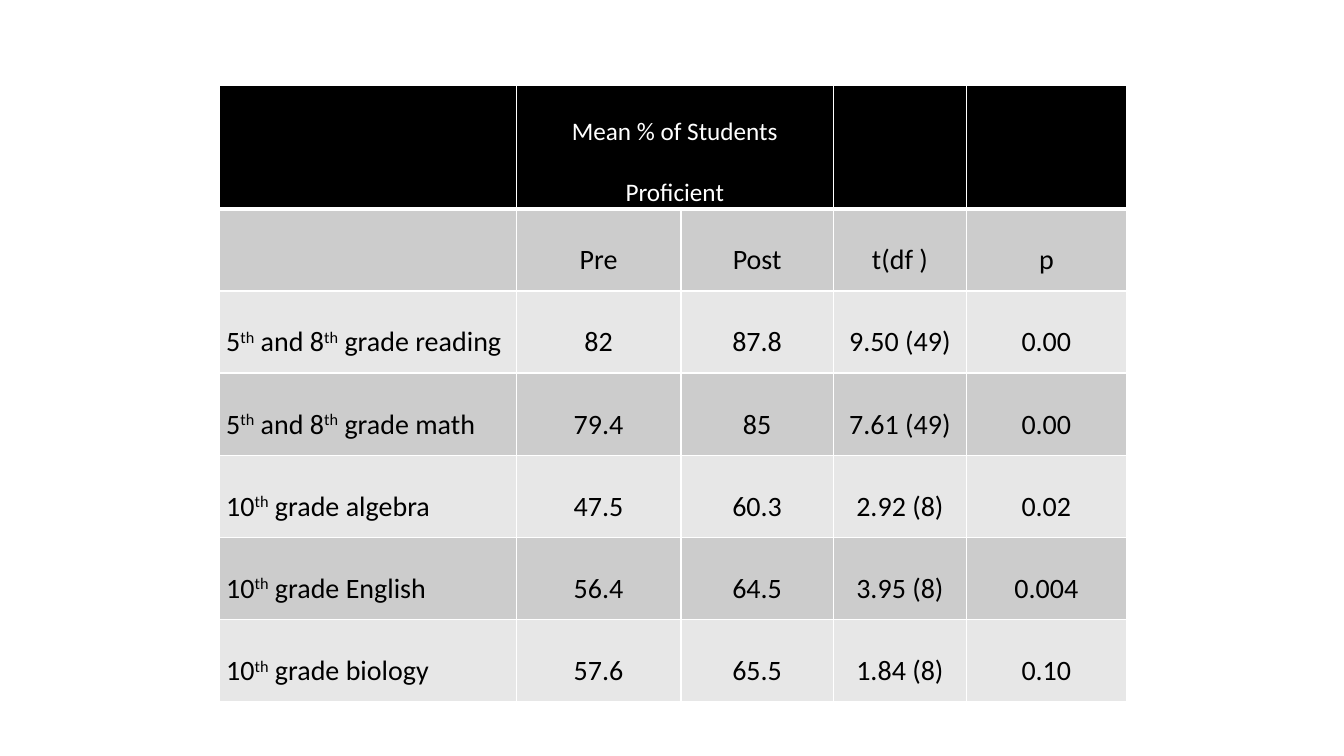
from lxml import etree
from pptx import Presentation
from pptx import util as u
from pptx.dml.color import RGBColor
from pptx.enum import text
from pptx.oxml import ns

BLACK = RGBColor(0x00, 0x00, 0x00)
WHITE = RGBColor(0xFF, 0xFF, 0xFF)
DARK_BAND = RGBColor(0xCC, 0xCC, 0xCC)
LIGHT_BAND = RGBColor(0xE7, 0xE7, 0xE7)

# Text between carets is superscript
HEADER = ["", "Mean % of Students Proficient", "", "", ""]
RESULTS = [
    ["", "Pre", "Post", "t(df )", "p"],
    ["5^th^ and 8^th^ grade reading", "82", "87.8", "9.50 (49)", "0.00"],
    ["5^th^ and 8^th^ grade math", "79.4", "85", "7.61 (49)", "0.00"],
    ["10^th^ grade algebra", "47.5", "60.3", "2.92 (8)", "0.02"],
    ["10^th^ grade English", "56.4", "64.5", "3.95 (8)", "0.004"],
    ["10^th^ grade biology", "57.6", "65.5", "1.84 (8)", "0.10"],
]
COLUMN_WIDTHS = [7.49, 4.15, 3.84, 3.36, 4.02]
HEADER_HEIGHT, RESULT_HEIGHT = 3.05, 2.07


class SlideBuilder:
    font = "Calibri"
    side_margin = u.Cm(0.18)

    def __init__(self, slide):
        self.slide = slide

    def table(self, left, top, widths, heights):
        frame = self.slide.shapes.add_table(
            len(heights), len(widths), u.Cm(left), u.Cm(top),
            u.Cm(sum(widths)), u.Cm(sum(heights)))
        for column, width in zip(frame.table.columns, widths):
            column.width = u.Cm(width)
        for row, height in zip(frame.table.rows, heights):
            row.height = u.Cm(height)
        return frame.table

    def borders(self, cell, bottom):
        properties = cell._tc.get_or_add_tcPr()
        for i, (side, points) in enumerate(zip("LRTB", (1, 1, 1, bottom))):
            line = etree.Element(ns.qn(f"a:ln{side}"), w=str(u.Pt(points)))
            paint = etree.SubElement(line, ns.qn("a:solidFill"))
            etree.SubElement(paint, ns.qn("a:srgbClr"), val=str(WHITE))
            properties.insert(i, line)

    def cell(self, cell, wording, fill, color, size, align, bottom=1):
        cell.fill.solid()
        cell.fill.fore_color.rgb = fill
        self.borders(cell, bottom)
        cell.margin_left = cell.margin_right = self.side_margin
        cell.margin_top = cell.margin_bottom = 0
        if not wording:
            return
        paragraph = cell.text_frame.paragraphs[0]
        paragraph.alignment = align
        paragraph.line_spacing = 2.0
        for i, part in enumerate(wording.split("^")):
            run = paragraph.add_run()
            run.text = part
            run.font.name = self.font
            run.font.size = u.Pt(size)
            run.font.bold = False
            run.font.color.rgb = color
            if i % 2:
                run._r.get_or_add_rPr().set("baseline", "30000")


def main():
    prs = Presentation()
    prs.slide_width, prs.slide_height = u.Cm(33.87), u.Cm(19.05)
    builder = SlideBuilder(prs.slides.add_slide(prs.slide_layouts[6]))

    heights = [HEADER_HEIGHT] + [RESULT_HEIGHT] * len(RESULTS)
    proficiency = builder.table(5.52, 2.16, COLUMN_WIDTHS, heights)

    # Header row, with one heading over the Pre and Post columns
    center, left = text.PP_ALIGN.CENTER, text.PP_ALIGN.LEFT
    for c, heading in enumerate(HEADER):
        builder.cell(proficiency.cell(0, c), heading, BLACK, WHITE, 18, center, bottom=3)
    proficiency.cell(0, 1).merge(proficiency.cell(0, 2))

    # Banded result rows
    for r, result in enumerate(RESULTS, start=1):
        band = DARK_BAND if r % 2 else LIGHT_BAND
        for c, value in enumerate(result):
            builder.cell(proficiency.cell(r, c), value, band, BLACK, 20,
                         center if c else left)

    prs.save("out.pptx")


if __name__ == "__main__":
    main()
